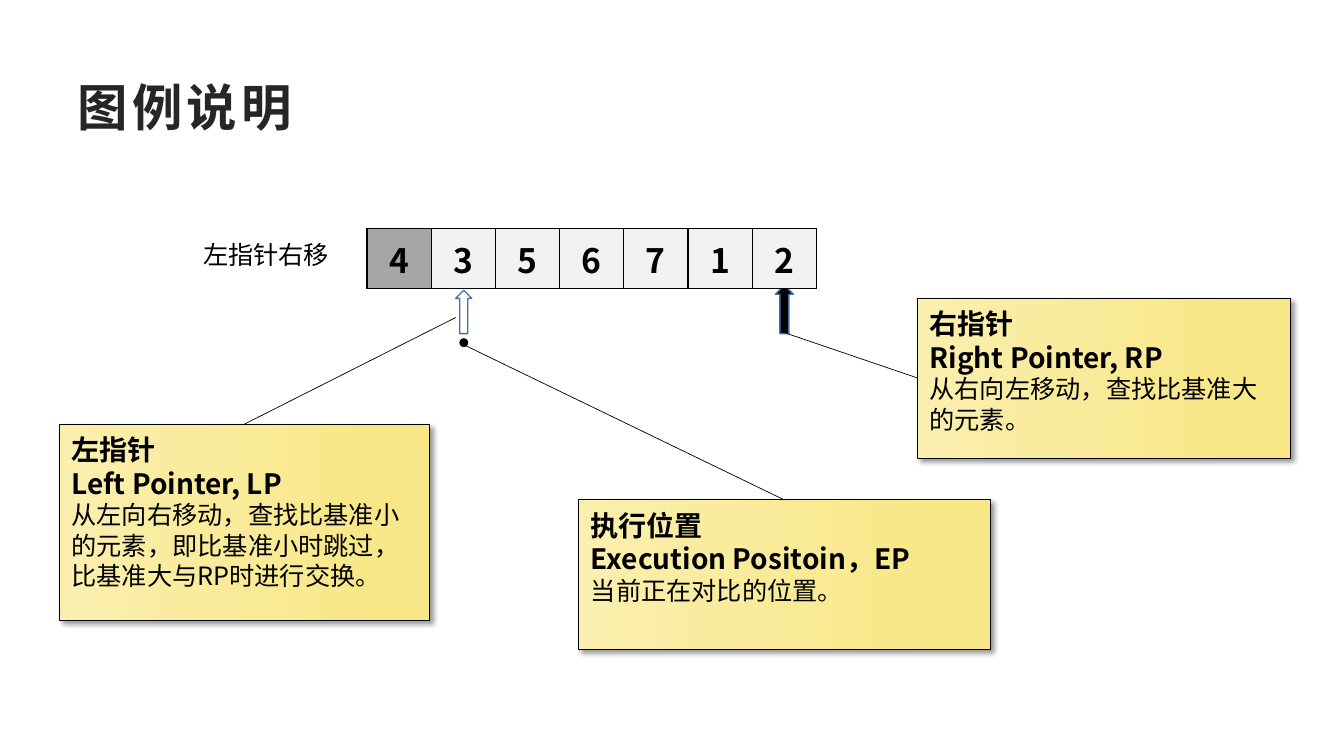
from dataclasses import dataclass
from typing import Optional

import lxml.etree
import pptx
import pptx.dml.color
import pptx.enum.shapes
import pptx.enum.text
import pptx.oxml
import pptx.oxml.ns
import pptx.shapes.autoshape
import pptx.shapes.base
import pptx.slide
import pptx.text.text
import pptx.util

Inches = pptx.util.Inches
Pt = pptx.util.Pt
Shapes = pptx.enum.shapes.MSO_SHAPE
Align = pptx.enum.text.PP_ALIGN
Anchor = pptx.enum.text.MSO_ANCHOR

COLORS = {
    "ink": "000000",
    "title": "262626",
    "pivot": "A6A6A6",
    "cell": "F2F2F2",
    "arrow": "476FAA",
    "note_light": "FAEFAE",
    "note_dark": "F8E786",
}
HAN_FONT = "Noto Sans CJK SC"
LATIN_FONT = "Arial"
NUMBERS = [4, 3, 5, 6, 7, 1, 2]
CELL_WIDTH, CELL_HEIGHT = 0.637, 0.59


@dataclass
class Box:
    left: float
    top: float
    width: float
    height: float

    def lengths(self) -> list[int]:
        return [Inches(v) for v in (self.left, self.top, self.width, self.height)]


@dataclass
class Marker:
    preset: int
    box: Box
    fill: Optional[str]
    line: str
    weight: float


@dataclass
class Note:
    box: Box
    name: str
    english: str
    meaning: str


@dataclass
class Leader:
    start: tuple[float, float]
    end: tuple[float, float]


MARKERS = [
    Marker(Shapes.UP_ARROW, Box(7.69, 2.83, 0.18, 0.48), "ink", "arrow", 1),
    Marker(Shapes.UP_ARROW, Box(4.52, 2.88, 0.16, 0.43), None, "arrow", 1),
    Marker(Shapes.OVAL, Box(4.56, 3.36, 0.08, 0.08), "ink", "ink", 0.5),
]
NOTES = [
    Note(Box(0.59, 4.21, 3.67, 1.95), "左指针", "Left Pointer, LP",
         "从左向右移动，查找比基准小的元素，即比基准小时跳过，比基准大与RP时进行交换。"),
    Note(Box(9.1, 2.96, 3.7, 1.59), "右指针", "Right Pointer, RP",
         "从右向左移动，查找比基准大的元素。"),
    Note(Box(5.74, 4.96, 4.08, 1.48), "执行位置", "Execution Positoin，EP",
         "当前正在对比的位置。"),
]
LEADERS = [
    Leader((4.52, 3.15), (2.42, 4.21)),
    Leader((9.1, 3.75), (7.78, 3.3)),
    Leader((7.78, 4.96), (4.62, 3.43)),
]


def rgb(color: str) -> pptx.dml.color.RGBColor:
    return pptx.dml.color.RGBColor.from_string(COLORS[color])


def add_run(paragraph: pptx.text.text._Paragraph, text: str, size: float,
            font: str = HAN_FONT, bold: bool = False, color: str = "ink",
            spacing: float = 0) -> None:
    run = paragraph.add_run()
    run.text = text
    run.font.size = Pt(size)
    run.font.bold = bold
    run.font.color.rgb = rgb(color)
    run.font.name = font
    properties = run.font._element
    lxml.etree.SubElement(properties, pptx.oxml.ns.qn("a:ea"), typeface=HAN_FONT)
    if spacing:
        properties.set("spc", str(round(spacing * 100)))


def set_insets(frame: pptx.text.text.TextFrame, left: float, top: float,
               right: float, bottom: float) -> None:
    frame.margin_left, frame.margin_top = Inches(left), Inches(top)
    frame.margin_right, frame.margin_bottom = Inches(right), Inches(bottom)


def add_title(slide: pptx.slide.Slide) -> None:
    title = slide.shapes.title
    title.left, title.top, title.width, title.height = Box(0.67, 0.67, 12, 0.77).lengths()
    frame = title.text_frame
    frame.auto_size = pptx.enum.text.MSO_AUTO_SIZE.NONE
    frame.vertical_anchor = Anchor.MIDDLE
    set_insets(frame, 0.1, 0.05, 0.1, 0.05)
    frame.paragraphs[0].alignment = Align.LEFT
    add_run(frame.paragraphs[0], "图例说明", 36, LATIN_FONT, True, "title", 3)


def add_shape(slide: pptx.slide.Slide, preset: int, box: Box, line: str,
              weight: float) -> pptx.shapes.autoshape.Shape:
    shape = slide.shapes.add_shape(preset, *box.lengths())
    shape.shadow.inherit = False
    shape.line.color.rgb = rgb(line)
    shape.line.width = Pt(weight)
    return shape


def add_marker(slide: pptx.slide.Slide, marker: Marker) -> None:
    shape = add_shape(slide, marker.preset, marker.box, marker.line, marker.weight)
    if marker.fill:
        shape.fill.solid()
        shape.fill.fore_color.rgb = rgb(marker.fill)
    else:
        shape.fill.background()


def add_numbers(slide: pptx.slide.Slide) -> None:
    """Draw the array as a one-row table with the pivot in a darker first cell."""
    box = Box(3.64, 2.27, CELL_WIDTH * len(NUMBERS), CELL_HEIGHT)
    table = slide.shapes.add_table(1, len(NUMBERS), *box.lengths()).table
    table.first_row = table.horz_banding = False
    for index, number in enumerate(NUMBERS):
        table.columns[index].width = Inches(CELL_WIDTH)
        cell = table.cell(0, index)
        cell.vertical_anchor = Anchor.MIDDLE
        for side in "LRTB":
            cell._tc.get_or_add_tcPr().append(pptx.oxml.parse_xml(
                f'<a:ln{side} {pptx.oxml.ns.nsdecls("a")} w="{Pt(1)}"><a:solidFill>'
                f'<a:srgbClr val="{COLORS["ink"]}"/></a:solidFill></a:ln{side}>'))
        cell.fill.solid()
        cell.fill.fore_color.rgb = rgb("cell" if index else "pivot")
        paragraph = cell.text_frame.paragraphs[0]
        paragraph.alignment = Align.CENTER
        add_run(paragraph, str(number), 24, bold=True)


def add_step_label(slide: pptx.slide.Slide) -> None:
    label = slide.shapes.add_textbox(*Box(1.93, 2.33, 1.42, 0.38).lengths())
    frame = label.text_frame
    frame.word_wrap = True
    set_insets(frame, 0.04, 0.04, 0.04, 0.04)
    frame.paragraphs[0].alignment = Align.CENTER
    add_run(frame.paragraphs[0], "左指针右移", 18, LATIN_FONT)


def add_drop_shadow(shape: pptx.shapes.base.BaseShape) -> None:
    effects = shape.element.spPr.find(pptx.oxml.ns.qn("a:effectLst"))
    effects.append(pptx.oxml.parse_xml(
        f'<a:outerShdw {pptx.oxml.ns.nsdecls("a")} blurRad="{Pt(4)}" dist="{Pt(3)}" '
        f'dir="2700000" algn="tl" rotWithShape="0"><a:srgbClr val="{COLORS["ink"]}">'
        '<a:alpha val="40000"/></a:srgbClr></a:outerShdw>'))


def add_note(slide: pptx.slide.Slide, note: Note) -> None:
    shape = add_shape(slide, Shapes.RECTANGLE, note.box, "ink", 0.75)
    add_drop_shadow(shape)
    shape.fill.gradient()
    shape.fill.gradient_angle = 0
    stops = zip(shape.fill.gradient_stops, (0, 0.89), ("note_light", "note_dark"))
    for stop, position, color in stops:
        stop.position = position
        stop.color.rgb = rgb(color)
    frame = shape.text_frame
    frame.word_wrap = True
    frame.vertical_anchor = Anchor.TOP
    set_insets(frame, 0.12, 0.08, 0.12, 0.12)
    heading, meaning = frame.paragraphs[0], frame.add_paragraph()
    heading.alignment = meaning.alignment = Align.LEFT
    add_run(heading, note.name, 20, bold=True)
    heading.add_line_break()
    add_run(heading, note.english, 20, bold=True)
    add_run(meaning, note.meaning, 18)


def add_leader(slide: pptx.slide.Slide, leader: Leader) -> None:
    ends = [Inches(value) for value in leader.start + leader.end]
    line = slide.shapes.add_connector(pptx.enum.shapes.MSO_CONNECTOR.STRAIGHT, *ends)
    line.line.color.rgb = rgb("ink")
    line.line.width = Pt(0.5)
    lxml.etree.SubElement(line.element.spPr, pptx.oxml.ns.qn("a:effectLst"))


def main() -> None:
    deck = pptx.Presentation()
    deck.slide_width, deck.slide_height = Inches(13.33), Inches(7.5)
    slide = deck.slides.add_slide(deck.slide_layouts.get_by_name("Title Only"))
    add_title(slide)
    for marker in MARKERS:
        add_marker(slide, marker)
    add_numbers(slide)
    add_step_label(slide)
    for note in NOTES:
        add_note(slide, note)
    for leader in LEADERS:
        add_leader(slide, leader)
    deck.save("out.pptx")


if __name__ == "__main__":
    main()
